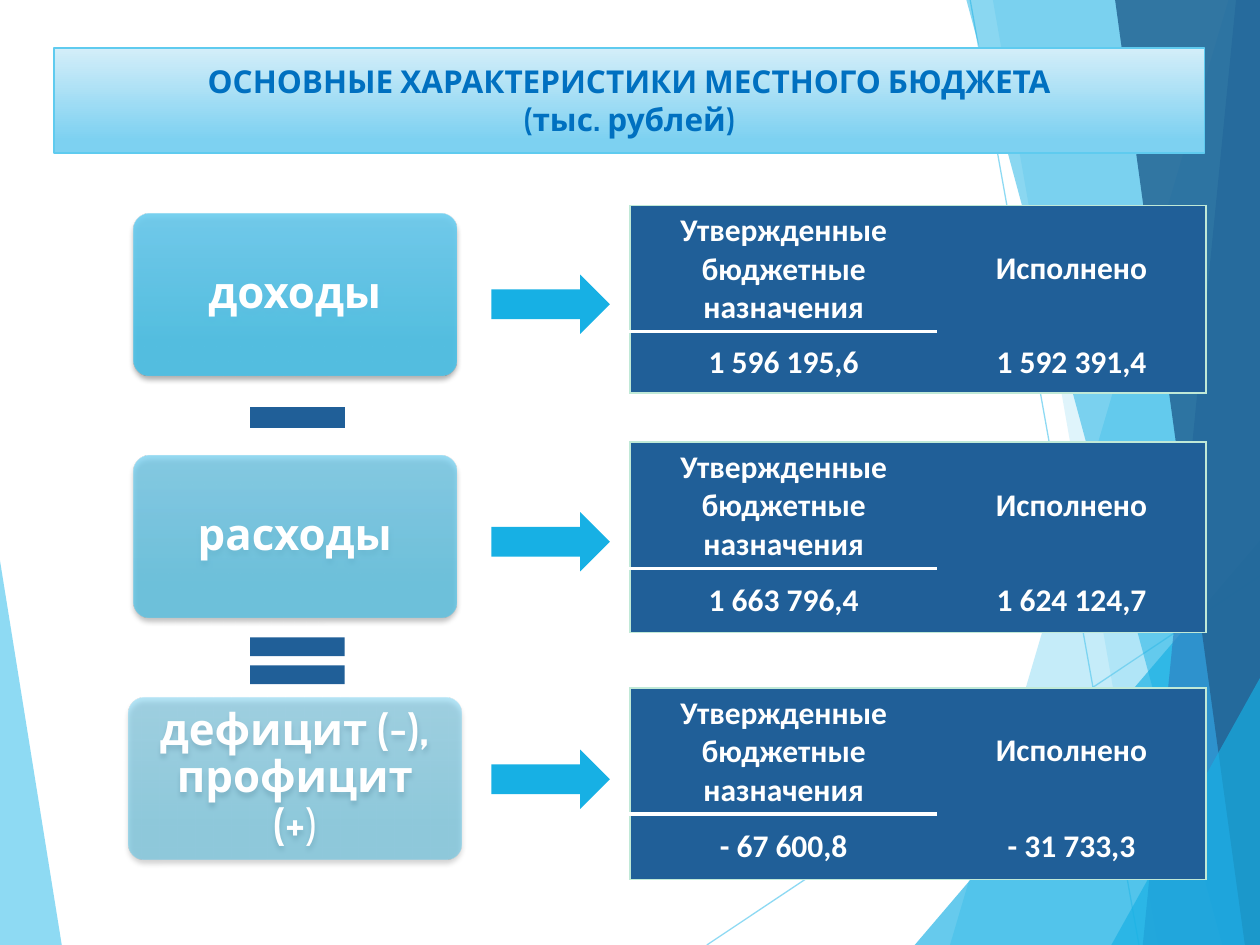
from lxml import etree
from pptx import Presentation
from pptx.dml.color import RGBColor
from pptx.enum.shapes import MSO_CONNECTOR, MSO_SHAPE
from pptx.enum.text import MSO_ANCHOR, MSO_AUTO_SIZE, PP_ALIGN
from pptx.oxml import parse_xml
from pptx.oxml.ns import qn
from pptx.util import Inches, Pt

STRAIGHT = MSO_CONNECTOR.STRAIGHT
ARROW, BOX = MSO_SHAPE.RIGHT_ARROW, MSO_SHAPE.ROUNDED_RECTANGLE
MINUS, EQUAL = MSO_SHAPE.MATH_MINUS, MSO_SHAPE.MATH_EQUAL
MIDDLE, CENTER = MSO_ANCHOR.MIDDLE, PP_ALIGN.CENTER
GROW, FIXED = MSO_AUTO_SIZE.SHAPE_TO_FIT_TEXT, MSO_AUTO_SIZE.NONE

WHITE = RGBColor(0xFF, 0xFF, 0xFF)
SKY = RGBColor(0x5F, 0xCB, 0xEF)
CYAN = RGBColor(0x17, 0xB0, 0xE4)
BLUE = RGBColor(0x2E, 0x83, 0xC3)
STEEL = RGBColor(0x22, 0x62, 0x92)
NAVY = RGBColor(0x20, 0x5F, 0x98)
MINT = RGBColor(0xC0, 0xE9, 0xD7)
TITLE = RGBColor(0x00, 0x70, 0xC0)
PALE, LIGHT = RGBColor(0xD4, 0xEE, 0xF9), RGBColor(0x7D, 0xD1, 0xF1)
TOP, BASE = RGBColor(0x6C, 0xCD, 0xF0), RGBColor(0x4B, 0xC0, 0xE6)

SHADOW = (
    '<a:effectLst xmlns:a="http://schemas.openxmlformats.org/drawingml/2006/main">'
    '<a:outerShdw blurRad="38100" dist="25400" dir="5400000" rotWithShape="0">'
    '<a:srgbClr val="000000"><a:alpha val="35000"/></a:srgbClr>'
    '</a:outerShdw></a:effectLst>'
)


def fade(shape, percent):
    """Set the opacity of every colour in the shape."""
    for color in shape.element.spPr.iter(qn("a:srgbClr")):
        etree.SubElement(color, qn("a:alpha"), val=str(percent * 1000))


def shade(shape, first, last, end):
    """Fill from top to bottom with two colours."""
    shape.fill.gradient()
    shape.fill.gradient_angle = 270
    for stop, color, place in zip(shape.fill.gradient_stops, (first, last), (0, end)):
        stop.color.rgb = color
        stop.position = place


prs = Presentation()
prs.slide_width, prs.slide_height = Inches(10), Inches(7.5)
slide = prs.slides.add_slide(prs.slide_layouts[5])
shapes = slide.shapes

# Thin background lines
for start, end in [((5.61, 7.5), (10, 4.57)), ((7.7, 0), (9.04, 7.5))]:
    line = shapes.add_connector(STRAIGHT, *map(Inches, start + end))
    line.line.color.rgb = SKY
    line.line.width = Pt(0.75)
    fade(line, 70)
    etree.SubElement(line.element.spPr, qn("a:effectLst"))

# Translucent background facets
facets = [
    (SKY, 70, [(0, 4.45), (0.49, 7.5), (0, 7.5)]),
    (SKY, 36, [(9.75, 0), (7.54, 7.5), (10, 7.5), (10, 0)]),
    (SKY, 20, [(7.88, 0), (9.19, 7.5), (10, 7.5), (10, 0)]),
    (CYAN, 66, [(7.26, 7.5), (10, 4.29), (10, 7.5)]),
    (CYAN, 50, [(7.67, 0), (9.7, 7.5), (10, 7.5), (10, 0)]),
    (BLUE, 70, [(9.81, 0), (9.07, 7.5), (10, 7.5), (10, 0)]),
    (STEEL, 82, [(8.85, 0), (9.88, 7.5), (10, 7.5), (10, 0)]),
    (CYAN, 66, [(8.82, 7.5), (10, 5.38), (10, 7.5)]),
]
for color, percent, points in facets:
    points = [(Inches(x), Inches(y)) for x, y in points]
    pen = shapes.build_freeform(*points[0])
    pen.add_line_segments(points[1:], close=True)
    facet = pen.convert_to_shape()
    facet.shadow.inherit = False
    facet.fill.solid()
    facet.fill.fore_color.rgb = color
    facet.line.fill.background()
    fade(facet, percent)

# Title banner, in front of the facets
title = shapes.title
title.element.getparent().append(title.element)
title.left, title.top = Inches(0.43), Inches(0.44)
title.width, title.height = Inches(9.13), Inches(0.71)
shade(title, PALE, LIGHT, 0.88)
title.line.color.rgb = SKY
title.line.width = Pt(1)
frame = title.text_frame
frame.text = "ОСНОВНЫЕ ХАРАКТЕРИСТИКИ МЕСТНОГО БЮДЖЕТА\n(тыс. рублей)"
frame.auto_size = GROW
frame.vertical_anchor = MIDDLE
for para in frame.paragraphs:
    para.alignment = CENTER
    para.space_before = Pt(0)
    para.font.name, para.font.size, para.font.bold = "Cabin", Pt(18), True
    para.font.color.rgb = TITLE

# Boxes: text runs with bold, left, top, width, opacity
boxes = [
    ([("доходы", True)], 1.06, 1.7, 2.56, 90),
    ([("расходы", True)], 1.06, 3.62, 2.56, 70),
    ([("дефицит (-), профицит (+", True), (")", False)], 1.02, 5.54, 2.64, 50),
]
for runs, left, top, width, percent in boxes:
    box = shapes.add_shape(BOX, Inches(left), Inches(top), Inches(width), Inches(1.28))
    box.adjustments[0] = 0.1
    shade(box, TOP, BASE, 0.78)
    box.line.fill.background()
    fade(box, percent)
    box.element.spPr.append(parse_xml(SHADOW))
    frame = box.text_frame
    frame.word_wrap = True
    frame.auto_size = FIXED
    frame.vertical_anchor = MIDDLE
    frame.margin_left = frame.margin_right = Inches(0.14)
    para = frame.paragraphs[0]
    para.alignment = CENTER
    para.line_spacing = 0.9
    para.font.name, para.font.size = "Cabin", Pt(25)
    para.font.color.rgb = WHITE
    for text, bold in runs:
        run = para.add_run()
        run.text = text
        run.font.bold = bold

# Arrows and the signs between the boxes
signs = [(ARROW, 3.9, 2.18 + 1.885 * row, 0.94, 0.47, CYAN) for row in range(3)]
signs += [(MINUS, 1.85, 2.96, 1.02, 0.71, NAVY), (EQUAL, 1.85, 4.93, 1.02, 0.63, NAVY)]
for kind, left, top, width, height, color in signs:
    sign = shapes.add_shape(kind, Inches(left), Inches(top), Inches(width), Inches(height))
    sign.shadow.inherit = False
    sign.fill.solid()
    sign.fill.fore_color.rgb = color
    sign.line.fill.background()

# Tables: top, height of the value row, values
HEADS = ["Утвержденные\nбюджетные\nназначения", "Исполнено"]
tables = [
    (1.63, 0.49, ["1 596 195,6", "1 592 391,4"]),
    (3.51, 0.51, ["1 663 796,4", "1 624 124,7"]),
    (5.46, 0.52, ["- 67 600,8", "- 31 733,3"]),
]
for top, height, values in tables:
    table = shapes.add_table(
        2, 2, Inches(5), Inches(top), Inches(4.57), Inches(1 + height)).table
    table.first_row = table.horz_banding = False
    table.columns[0].width, table.columns[1].width = Inches(2.44), Inches(2.13)
    table.rows[0].height, table.rows[1].height = Inches(1), Inches(height)
    for row, texts in enumerate([HEADS, values]):
        for col, text in enumerate(texts):
            cell = table.cell(row, col)
            # Mint frame, and a white rule under the first heading
            outer = {"L": col == 0, "R": col == 1, "T": row == 0, "B": row == 1}
            for side, shown in outer.items():
                rule = col == 0 and side in "TB" and not shown
                edge = etree.SubElement(
                    cell._tc.get_or_add_tcPr(), qn("a:ln" + side),
                    w=str(Pt(2 if rule else 1)))
                if shown or rule:
                    fill = etree.SubElement(edge, qn("a:solidFill"))
                    etree.SubElement(
                        fill, qn("a:srgbClr"), val=str(WHITE if rule else MINT))
                else:
                    etree.SubElement(edge, qn("a:noFill"))
            cell.fill.solid()
            cell.fill.fore_color.rgb = NAVY
            cell.vertical_anchor = MIDDLE
            cell.text = text
            for para in cell.text_frame.paragraphs:
                para.alignment = CENTER
                para.font.name, para.font.size, para.font.bold = "Calibri", Pt(18), True
                para.font.color.rgb = WHITE

prs.save("out.pptx")
